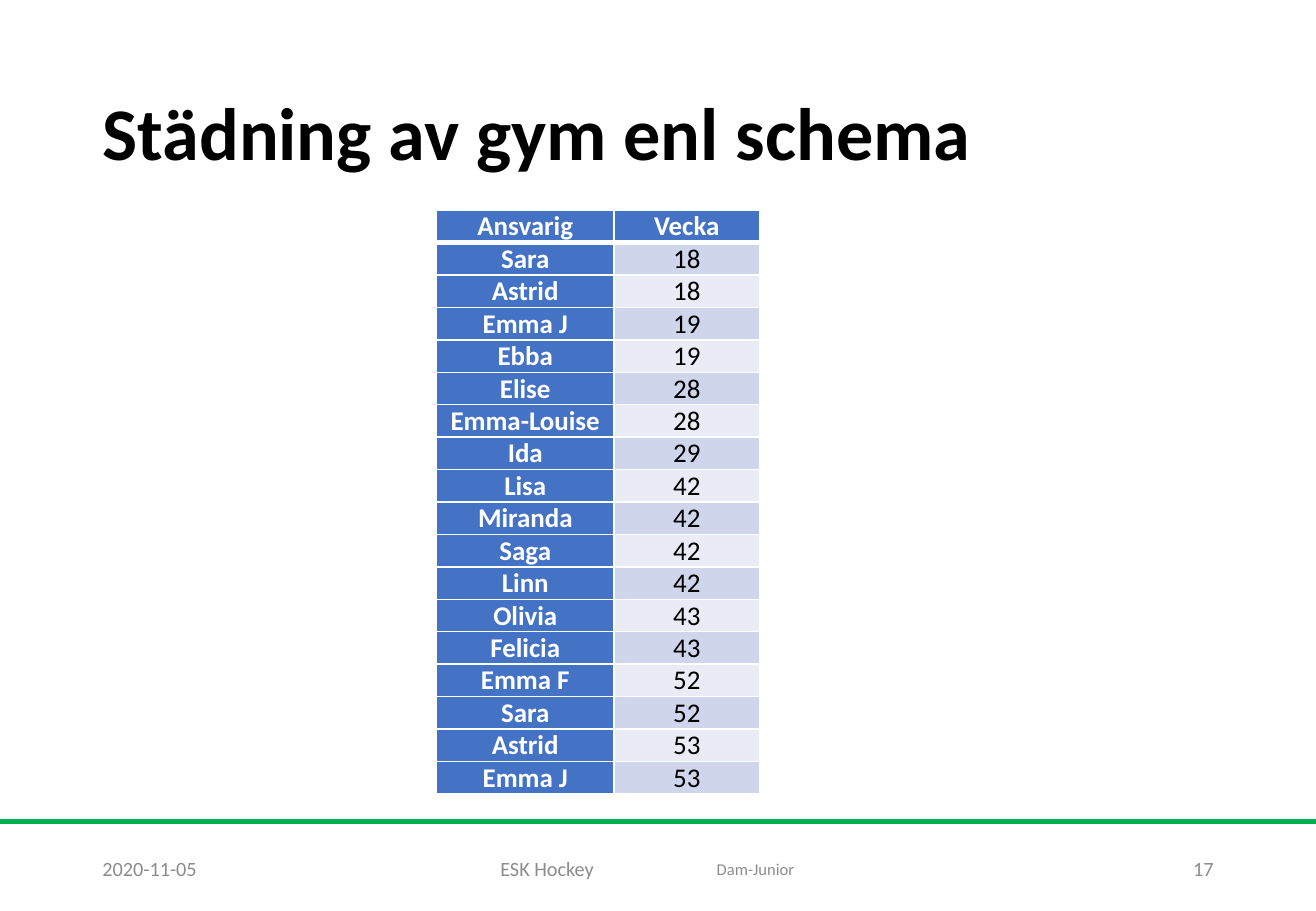
from dataclasses import dataclass

from lxml.etree import SubElement
from pptx import Presentation
from pptx.dml.color import RGBColor
from pptx.enum.shapes import MSO_CONNECTOR
from pptx.enum.text import MSO_ANCHOR as Anchor, MSO_AUTO_SIZE as AutoSize, PP_ALIGN as Align
from pptx.oxml.ns import qn
from pptx.slide import Slide
from pptx.table import _Cell as Cell
from pptx.text.text import TextFrame
from pptx.util import Pt


@dataclass(frozen=True)
class Theme:
    font: str = "Calibri"
    black: str = "000000"
    white: str = "FFFFFF"
    gray: str = "8C8C8C"
    green: str = "00B050"
    blue: str = "4472C4"
    bands: tuple[str, str] = ("CFD5EA", "E9EBF5")
    title: float = 44
    body: float = 16
    footer: float = 12
    team: float = 9.8


@dataclass(frozen=True)
class Footer:
    text: str
    left: float
    width: float
    size: float
    align: Align = Align.LEFT
    inset_x: float = 7.2
    inset_y: float = 3.6


@dataclass(frozen=True)
class Duty:
    name: str
    week: int


T = Theme()
SLIDE_W, SLIDE_H = 780, 540
FOOTER_TOP, FOOTER_H = 500.4, 28.8
RULE_Y = 486.7
TABLE_LEFT, TABLE_TOP, ROW_H = 258.8, 124.6, 19.2
COL_WIDTHS = (105.1, 86.4)
CELL_INSET = 4.9

FOOTERS = (
    Footer("Dam-Junior", 419, 113.8, T.team, inset_x=5.8, inset_y=2.9),
    Footer("2020-11-05", 53.6, 175.5, T.footer),
    Footer("ESK Hockey", 258.4, 131.8, T.footer, Align.CENTER),
    Footer("17", 550.9, 175.5, T.footer, Align.RIGHT),
)

DUTIES = (
    Duty("Sara", 18), Duty("Astrid", 18), Duty("Emma J", 19), Duty("Ebba", 19),
    Duty("Elise", 28), Duty("Emma-Louise", 28), Duty("Ida", 29), Duty("Lisa", 42),
    Duty("Miranda", 42), Duty("Saga", 42), Duty("Linn", 42), Duty("Olivia", 43),
    Duty("Felicia", 43), Duty("Emma F", 52), Duty("Sara", 52), Duty("Astrid", 53),
    Duty("Emma J", 53),
)


def write(tf: TextFrame, text: str, *, size: float, color: str, bold: bool = False,
          align: Align = Align.LEFT, spacing: float = 1.0) -> None:
    p = tf.paragraphs[0]
    p.alignment = align
    p.line_spacing = spacing
    r = p.add_run()
    r.text = text
    r.font.name = T.font
    r.font.size = Pt(size)
    r.font.bold = bold
    r.font.color.rgb = RGBColor.from_string(color)


def add_rule(s: Slide) -> None:
    rule = s.shapes.add_connector(MSO_CONNECTOR.STRAIGHT, Pt(0), Pt(RULE_Y), Pt(SLIDE_W), Pt(RULE_Y))
    rule.line.color.rgb = RGBColor.from_string(T.green)
    rule.line.width = Pt(3)
    SubElement(rule._element.spPr, qn("a:effectLst"))


def add_title(s: Slide, text: str) -> None:
    sp = s.shapes.title
    sp.left, sp.top, sp.width, sp.height = Pt(53.6), Pt(28.8), Pt(672.8), Pt(104.4)
    tf = sp.text_frame
    tf.word_wrap = True
    tf.auto_size = AutoSize.NONE
    tf.vertical_anchor = Anchor.MIDDLE
    write(tf, text, size=T.title, color=T.black, bold=True, spacing=0.9)


def add_footer(s: Slide, footer: Footer) -> None:
    sp = s.shapes.add_textbox(Pt(footer.left), Pt(FOOTER_TOP), Pt(footer.width), Pt(FOOTER_H))
    tf = sp.text_frame
    tf.word_wrap = True
    tf.vertical_anchor = Anchor.MIDDLE
    tf.margin_left = tf.margin_right = Pt(footer.inset_x)
    tf.margin_top = tf.margin_bottom = Pt(footer.inset_y)
    write(tf, footer.text, size=footer.size, color=T.gray, align=footer.align)


def set_borders(cell: Cell, top: float, bottom: float) -> None:
    tc_pr = cell._tc.get_or_add_tcPr()
    for side, width in (("L", 1), ("R", 1), ("T", top), ("B", bottom)):
        ln = SubElement(tc_pr, qn(f"a:ln{side}"), w=str(Pt(width)))
        SubElement(SubElement(ln, qn("a:solidFill")), qn("a:srgbClr"), val=T.white)


def fill_cell(cell: Cell, text: str, row: int, col: int) -> None:
    strong = row == 0 or col == 0
    set_borders(cell, top=3 if row == 1 else 1, bottom=3 if row == 0 else 1)
    cell.fill.solid()
    cell.fill.fore_color.rgb = RGBColor.from_string(T.blue if strong else T.bands[(row - 1) % 2])
    cell.margin_left = cell.margin_right = Pt(CELL_INSET)
    cell.margin_top = cell.margin_bottom = Pt(0)
    write(cell.text_frame, text, size=T.body, color=T.white if strong else T.black,
          bold=strong, align=Align.CENTER)


def add_schedule(s: Slide, duties: tuple[Duty, ...]) -> None:
    rows = [("Ansvarig", "Vecka")] + [(d.name, str(d.week)) for d in duties]
    table = s.shapes.add_table(len(rows), len(COL_WIDTHS), Pt(TABLE_LEFT), Pt(TABLE_TOP),
                               Pt(sum(COL_WIDTHS)), Pt(ROW_H * len(rows))).table
    table.first_col = True
    for col, width in enumerate(COL_WIDTHS):
        table.columns[col].width = Pt(width)
    for row, texts in enumerate(rows):
        table.rows[row].height = Pt(ROW_H)
        for col, text in enumerate(texts):
            fill_cell(table.cell(row, col), text, row, col)


def main() -> None:
    prs = Presentation()
    prs.slide_width, prs.slide_height = Pt(SLIDE_W), Pt(SLIDE_H)
    s = prs.slides.add_slide(prs.slide_layouts[5])
    add_rule(s)
    add_title(s, "Städning av gym enl schema")
    for footer in FOOTERS:
        add_footer(s, footer)
    add_schedule(s, DUTIES)
    prs.save("out.pptx")


if __name__ == "__main__":
    main()
